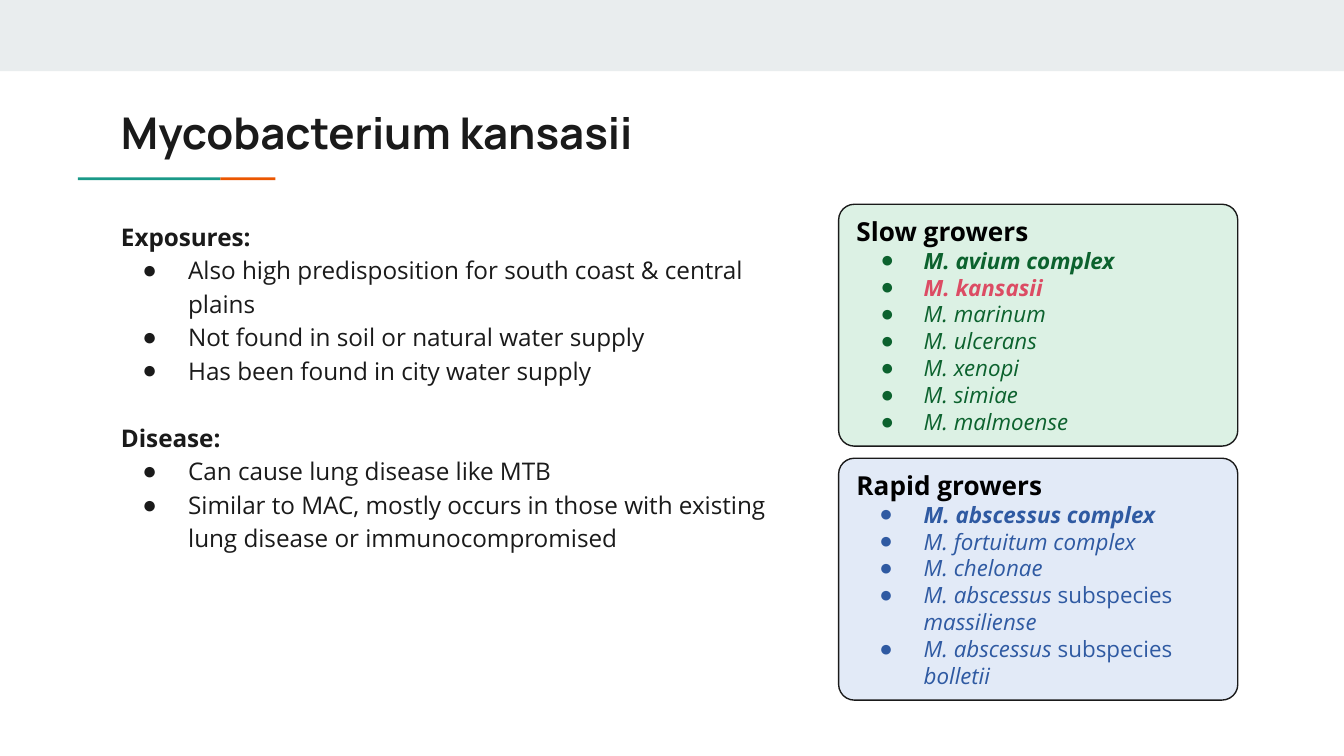
from lxml import etree
from pptx import Presentation
from pptx.dml.color import RGBColor
from pptx.enum.shapes import MSO_SHAPE
from pptx.enum.text import MSO_ANCHOR, MSO_AUTO_SIZE, PP_ALIGN
from pptx.oxml.ns import qn
from pptx.util import Inches, Pt

RECT, ROUNDED = MSO_SHAPE.RECTANGLE, MSO_SHAPE.ROUNDED_RECTANGLE
TOP, MIDDLE = MSO_ANCHOR.TOP, MSO_ANCHOR.MIDDLE
LEFT, NO_FIT = PP_ALIGN.LEFT, MSO_AUTO_SIZE.NONE

INK = RGBColor(0x1A, 0x1A, 0x1A)
BLACK = RGBColor(0, 0, 0)
BAND = RGBColor(0xE9, 0xED, 0xEE)
TEAL = RGBColor(0x1A, 0x99, 0x88)
ORANGE = RGBColor(0xEB, 0x56, 0x00)
GREEN = RGBColor(0x0C, 0x62, 0x2E)
PALE_GREEN = RGBColor(0xDC, 0xF1, 0xE4)
BLUE = RGBColor(0x2F, 0x5A, 0xA2)
PALE_BLUE = RGBColor(0xE2, 0xEA, 0xF7)
RED = RGBColor(0xDC, 0x4C, 0x64)

TITLE_FONT, BODY_FONT, BULLET_FONT = "Manrope", "Open Sans", "Arial"

# Grid in inches: two columns, the right one with two stacked rows
SLIDE_W = 10
SLIDE_H = SLIDE_W * 9 / 16
COL_X, COL_W = (0.8, 6.24), (5.32, 2.97)
ROW_Y, ROW_H, ROW_GAP = 1.52, 1.8, 0.09

SECTIONS = [
    ("Exposures:", ["Also high predisposition for south coast & central plains",
                    "Not found in soil or natural water supply",
                    "Has been found in city water supply"]),
    ("Disease:", ["Can cause lung disease like MTB",
                  "Similar to MAC, mostly occurs in those with existing "
                  "lung disease or immunocompromised"]),
]
SLOW = ["marinum", "ulcerans", "xenopi", "simiae", "malmoense"]
SUBSPECIES = ["massiliense", "bolletii"]


def place(sp, x, y, w, h):
    sp.left, sp.top, sp.width, sp.height = map(Inches, (x, y, w, h))


def prepare(tf, anchor):
    tf.word_wrap = True
    tf.auto_size = NO_FIT
    tf.vertical_anchor = anchor
    tf.margin_left = tf.margin_right = Inches(0.1)
    tf.margin_top = tf.margin_bottom = Inches(0.1)


def add_run(p, text, size, color, font=BODY_FONT, bold=False, italic=False):
    r = p.add_run()
    r.text = text
    r.font.name, r.font.size = font, Pt(size)
    r.font.bold, r.font.italic = bold, italic
    r.font.color.rgb = color


def add_paragraph(tf, bullet=None, hang=0.0, spacing=1.0, before=0):
    """Append a paragraph; bullet is the bullet colour, or None for a heading."""
    first = tf.paragraphs[0]
    p = tf.add_paragraph() if first.runs else first
    pPr = p._p.get_or_add_pPr()
    pPr.set("marL", str(Inches(0.5) if bullet else 0))
    pPr.set("indent", str(-Inches(hang)))
    if bullet:
        clr = etree.SubElement(pPr, qn("a:buClr"))
        etree.SubElement(clr, qn("a:srgbClr"), val=str(bullet))
        etree.SubElement(pPr, qn("a:buFont"), typeface=BULLET_FONT)
        etree.SubElement(pPr, qn("a:buChar"), char="●")
    else:
        etree.SubElement(pPr, qn("a:buNone"))
    p.alignment = LEFT
    p.line_spacing = spacing
    p.space_before = Pt(before)
    return p


def add_block(s, kind, x, y, w, h, fill):
    sp = s.shapes.add_shape(kind, *map(Inches, (x, y, w, h)))
    sp.shadow.inherit = False
    sp.fill.solid()
    sp.fill.fore_color.rgb = fill
    sp.line.fill.background()
    return sp


def add_title(s, text):
    sp = s.shapes.title
    place(sp, COL_X[0], 0.69, 8.41, 0.59)
    prepare(sp.text_frame, TOP)
    add_run(add_paragraph(sp.text_frame), text, 23.4, INK, TITLE_FONT, bold=True)


def add_body(s, sections):
    sp = s.placeholders[1]
    place(sp, COL_X[0], ROW_Y, COL_W[0], 3.68)
    tf = sp.text_frame
    prepare(tf, TOP)
    for i, (heading, items) in enumerate(sections):
        p = add_paragraph(tf, spacing=1.15, before=18 if i else 0)
        add_run(p, heading, 13, INK, bold=True)
        for item in items:
            add_run(add_paragraph(tf, INK, 0.34, 1.15), item, 13, INK)


def add_panel(s, row, heading, items, color, fill, hang):
    """Each item is a list of runs: (text, colour, bold, italic)."""
    y = ROW_Y + row * (ROW_H + ROW_GAP)
    sp = add_block(s, ROUNDED, COL_X[1], y, COL_W[1], ROW_H, fill)
    sp.adjustments[0] = 0.065
    sp.line.color.rgb = INK
    sp.line.width = Pt(0.75)
    tf = sp.text_frame
    prepare(tf, MIDDLE)
    add_run(add_paragraph(tf), heading, 14, BLACK, bold=True)
    for runs in items:
        p = add_paragraph(tf, color, hang)
        for text, run_color, bold, italic in runs:
            add_run(p, text, 12, run_color, bold=bold, italic=italic)


def main():
    prs = Presentation()
    prs.slide_width, prs.slide_height = Inches(SLIDE_W), Inches(SLIDE_H)
    s = prs.slides.add_slide(prs.slide_layouts[1])

    # Top band and two-colour rule under the title
    add_block(s, RECT, 0, 0, SLIDE_W, 0.53, BAND)
    add_block(s, RECT, 0.58, 1.32, 1.06, 0.02, TEAL)
    add_block(s, RECT, 1.64, 1.32, 0.41, 0.02, ORANGE)

    # Title and main list
    add_title(s, "Mycobacterium kansasii")
    add_body(s, SECTIONS)

    # Species panels
    slow = [[("M. avium complex", GREEN, True, True)],
            [("M. kansasii", RED, True, True)]]
    slow += [[(f"M. {name}", GREEN, False, True)] for name in SLOW]
    rapid = [[("M. abscessus complex", BLUE, True, True)],
             [("M. fortuitum complex", BLUE, False, True)],
             [("M. chelonae", BLUE, False, True)]]
    rapid += [[("M. abscessus ", BLUE, False, True),
               ("subspecies ", BLUE, False, False),
               (name, BLUE, False, True)] for name in SUBSPECIES]
    add_panel(s, 1, "Rapid growers", rapid, BLUE, PALE_BLUE, 0.33)
    add_panel(s, 0, "Slow growers", slow, GREEN, PALE_GREEN, 0.32)

    prs.save("out.pptx")


if __name__ == "__main__":
    main()
